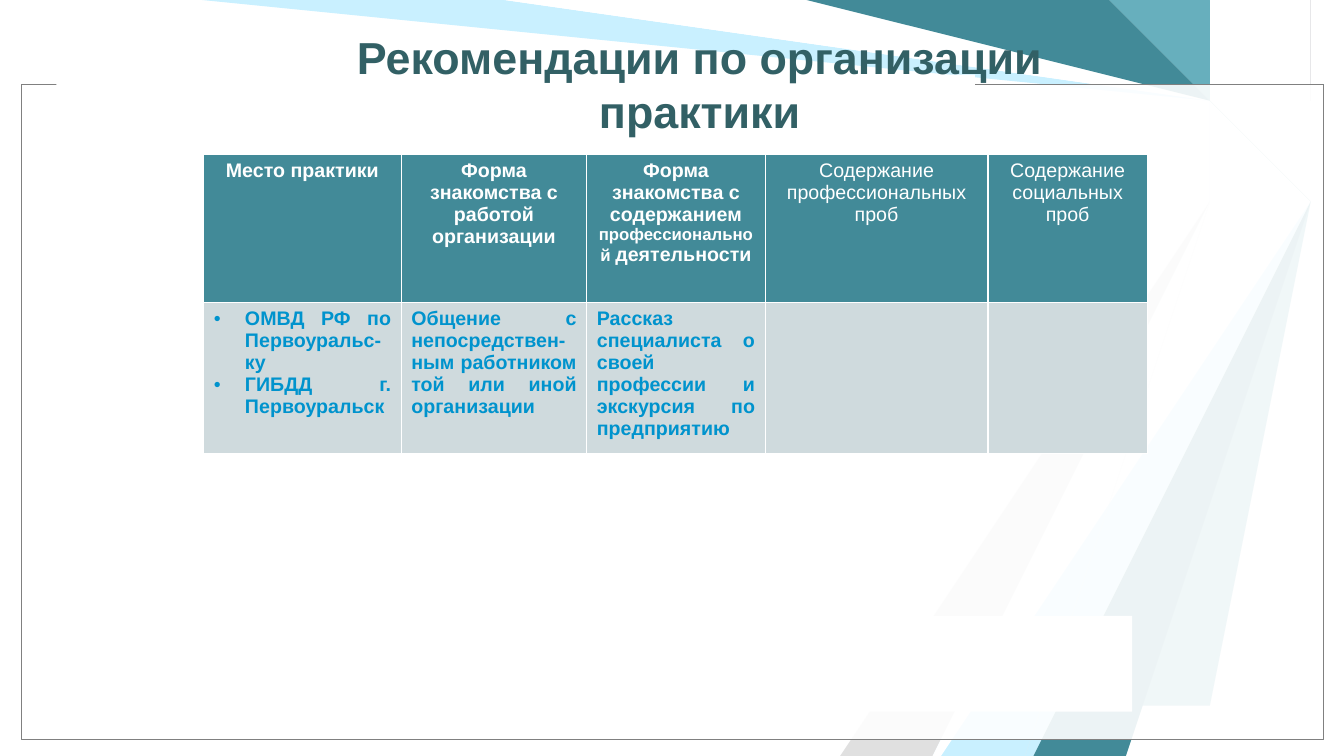
import pptx
import pptx.dml.color
import pptx.enum.shapes
import pptx.enum.text
import pptx.oxml
import pptx.oxml.ns
import pptx.util
from lxml import etree

Inches = pptx.util.Inches
Pt = pptx.util.Pt
ALIGN = pptx.enum.text.PP_ALIGN
qn = pptx.oxml.ns.qn

FONT = "Arial"
COLORS = {
    "white": "FFFFFF", "teal": "428A98", "light_teal": "67AFBD", "sky": "C9F0FF",
    "silver": "E0E0E0", "navy": "424456", "mist": "E0EFF1", "frame_blue": "0084B4",
    "frame_gray": "808080", "title": "326065", "cell": "CFDADD", "cell_text": "0093CD",
}

RIBBONS = [
    ("light_teal", [(11.89, 0), (12.39, 0.77), (12.78, 1.67), (12.15, 7.49), (11.42, 7.49),
                    (12.67, 1.67), (12.22, 0.75), (11.17, 0)]),
    ("sky", [(1.56, 0), (5.11, 0), (12.18, 0.78), (12.56, 1.69), (9.89, 7.5), (9.22, 7.5),
             (12.46, 1.73), (12.01, 0.91)]),
    ("silver", [(8.89, 7.5), (12.36, 1.81), (8, 7.5)]),
    ("white", [(5, 0), (12.13, 0.82), (12.43, 1.62), (9, 7.5), (9.33, 7.5), (12.54, 1.58),
               (12.22, 0.75), (8, 0)]),
    ("white", [(12.33, 0), (12.22, 0.17), (13.04, 1.2), (13.33, 1.25), (13.33, 1),
               (12.33, 0.17), (12.43, 0)]),
    ("navy", [(13.33, 0.83), (12.56, 0.25), (13.33, 0.67)]),
    ("teal", [(8.11, 0), (10.56, 0), (12.4, 0.7), (12.88, 1.69), (11.11, 7.5), (9.78, 7.5),
              (12.56, 1.58), (12.22, 0.75)]),
    ("mist", [(9.76, 7.5), (12.43, 1.83), (9.98, 7.5)]),
]

COLUMN_WIDTHS = [1.96, 1.84, 1.77, 2.21, 1.58]
ROW_HEIGHTS = [1.47, 1.41]
# Each header is (bold, [(text, size), ...])
HEADERS = [
    (True, [("Место практики", 14)]),
    (True, [("Форма знакомства с работой организации", 14)]),
    (True, [("Форма знакомства с содержанием ", 14), ("профессиональной ", 12),
            ("деятельности", 14)]),
    (False, [("Содержание профессиональных проб", 14)]),
    (False, [("Содержание социальных проб", 14)]),
]
PLACES = ["ОМВД РФ по Первоуральс-ку", "ГИБДД г. Первоуральск"]
BODY_TEXTS = {
    1: "Общение с непосредствен-ным работником той или иной организации",
    2: "Рассказ специалиста о своей профессии и экскурсия по предприятию",
}


def rgb(name):
    return pptx.dml.color.RGBColor.from_string(COLORS[name])


def paint(shape, fill, line=None):
    shape.shadow.inherit = False
    shape.fill.solid()
    shape.fill.fore_color.rgb = rgb(fill)
    if line:
        shape.line.color.rgb = rgb(line)
        shape.line.width = Pt(0.75)
    else:
        shape.line.fill.background()


def add_ribbon(slide, fill, points):
    builder = slide.shapes.build_freeform(*points[0], scale=Inches(1))
    builder.add_line_segments(points[1:], close=True)
    paint(builder.convert_to_shape(), fill)


def add_panel(slide, box, line=None, opacity=None):
    """Add a white rectangle; opacity is a percentage."""
    shape = slide.shapes.add_shape(pptx.enum.shapes.MSO_SHAPE.RECTANGLE, *map(Inches, box))
    paint(shape, "white", line)
    if opacity:
        color = shape.fill._xPr.find(qn("a:solidFill"))[0]
        etree.SubElement(color, qn("a:alpha"), val=str(opacity * 1000))


def add_run(paragraph, text, size, color, bold=True):
    run = paragraph.add_run()
    run.text = text
    run.font.name = FONT
    run.font.size = Pt(size)
    run.font.bold = bold
    run.font.color.rgb = rgb(color)


def add_title(slide, text):
    box = slide.shapes.add_textbox(Inches(2.57), Inches(0.44), Inches(8.74), Inches(0.78))
    frame = box.text_frame
    frame.word_wrap = True
    frame.vertical_anchor = pptx.enum.text.MSO_ANCHOR.MIDDLE
    frame.paragraphs[0].alignment = ALIGN.CENTER
    add_run(frame.paragraphs[0], text, 32, "title")


def add_bullet(paragraph):
    properties = paragraph._p.get_or_add_pPr()
    properties.set("marL", str(Inches(0.31)))
    properties.set("indent", str(-Inches(0.31)))
    etree.SubElement(properties, qn("a:buFont"), typeface=FONT)
    etree.SubElement(properties, qn("a:buChar"), char="•")


def style_cell(cell, fill):
    """Fill a cell and give it thin white borders."""
    cell.fill.solid()
    cell.fill.fore_color.rgb = rgb(fill)
    properties = cell._tc.get_or_add_tcPr()
    for index, side in enumerate(["lnL", "lnR", "lnT", "lnB"]):
        border = etree.Element(qn("a:" + side), w=str(Pt(1)))
        line_fill = etree.SubElement(border, qn("a:solidFill"))
        etree.SubElement(line_fill, qn("a:srgbClr"), val=COLORS["white"])
        properties.insert(index, border)


def add_practice_table(slide):
    frame = slide.shapes.add_table(
        len(ROW_HEIGHTS), len(COLUMN_WIDTHS), Inches(2.02), Inches(1.53),
        Inches(sum(COLUMN_WIDTHS)), Inches(sum(ROW_HEIGHTS)))
    table = frame.table
    table.horz_banding = False
    for column, width in zip(table.columns, COLUMN_WIDTHS):
        column.width = Inches(width)
    for row, height, fill in zip(table.rows, ROW_HEIGHTS, ["teal", "cell"]):
        row.height = Inches(height)
        for cell in row.cells:
            style_cell(cell, fill)

    for index, (bold, pieces) in enumerate(HEADERS):
        paragraph = table.cell(0, index).text_frame.paragraphs[0]
        paragraph.alignment = ALIGN.CENTER
        for text, size in pieces:
            add_run(paragraph, text, size, "white", bold)

    places_frame = table.cell(1, 0).text_frame
    places_frame.add_paragraph()
    for paragraph, place in zip(places_frame.paragraphs, PLACES):
        add_bullet(paragraph)
        paragraph.alignment = ALIGN.JUSTIFY
        add_run(paragraph, place, 14, "cell_text")
    for index, text in BODY_TEXTS.items():
        paragraph = table.cell(1, index).text_frame.paragraphs[0]
        paragraph.alignment = ALIGN.JUSTIFY
        add_run(paragraph, text, 14, "cell_text")


def main():
    presentation = pptx.Presentation()
    presentation.slide_width = Inches(13.33)
    presentation.slide_height = Inches(7.5)
    slide = presentation.slides.add_slide(presentation.slide_layouts[6])
    for fill, points in RIBBONS:
        add_ribbon(slide, fill, points)
    for line in ["frame_blue", "frame_gray"]:
        add_panel(slide, (0.21, 0.84, 12.92, 6.5), line, opacity=69)
    add_panel(slide, (0.56, 0.74, 9.11, 0.17))
    add_title(slide, "Рекомендации по организации практики")
    add_practice_table(slide)
    add_panel(slide, (2.62, 6.11, 8.61, 0.95))
    presentation.save("out.pptx")


if __name__ == "__main__":
    main()
